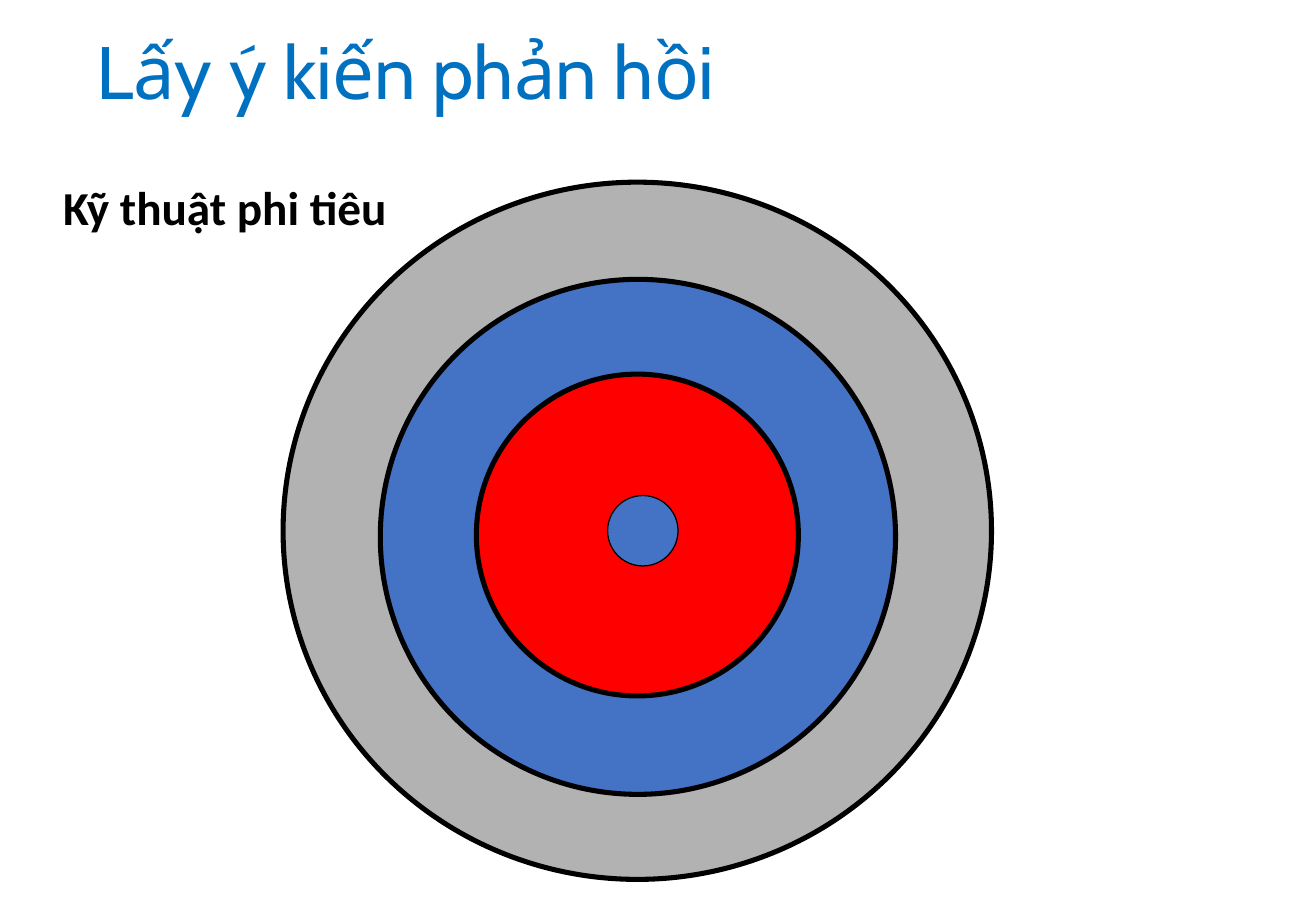
from pptx import Presentation
from pptx import util as u
from pptx.dml.color import RGBColor
from pptx.enum import shapes, text

PX = 9144  # EMU per px, 100 px to the inch
TITLE_ONLY = 5

# Rings from the outside in: left, top, width, height, fill, line width in points
RINGS = [
    (233, 150, 583, 574, "B2B2B2", 3),
    (313, 230, 424, 424, "4472C4", 3),
    (392, 308, 265, 265, "FF0000", 3),
    (500, 408, 58, 58, "4472C4", 0.75),
]


def px(*lengths):
    return [u.Emu(length * PX) for length in lengths]


def color(value):
    return RGBColor.from_string(value)


def write(shape, content, font_name, size, font_color, bold=False):
    frame = shape.text_frame
    frame.text = content
    frame.word_wrap = True
    paragraph = frame.paragraphs[0]
    paragraph.alignment = text.PP_ALIGN.LEFT
    font = paragraph.font
    font.name, font.size, font.bold = font_name, u.Pt(size), bold
    font.color.rgb = color(font_color)
    return paragraph


def set_title(slide, content):
    title = slide.shapes.title
    title.left, title.top, title.width, title.height = px(69, 15, 898, 94)
    paragraph = write(title, content, "Cabin", 44, "0070C0")
    paragraph.line_spacing = 0.9
    title.text_frame.vertical_anchor = text.MSO_ANCHOR.MIDDLE
    title.text_frame.auto_size = text.MSO_AUTO_SIZE.NONE


def add_ring(slide, left, top, width, height, fill, line_width):
    ring = slide.shapes.add_shape(shapes.MSO_SHAPE.OVAL, *px(left, top, width, height))
    ring.shadow.inherit = False
    ring.fill.solid()
    ring.fill.fore_color.rgb = color(fill)
    ring.line.color.rgb = color("000000")
    ring.line.width = u.Pt(line_width)


def add_label(slide, content):
    label = slide.shapes.add_textbox(*px(42, 142, 358, 57))
    write(label, content, "Calibri", 28, "000000", bold=True)
    label.text_frame.auto_size = text.MSO_AUTO_SIZE.SHAPE_TO_FIT_TEXT


def main():
    presentation = Presentation()
    presentation.slide_width, presentation.slide_height = px(1083, 750)
    slide = presentation.slides.add_slide(presentation.slide_layouts[TITLE_ONLY])

    # Heading
    set_title(slide, "Lấy ý kiến phản hồi")

    # Dartboard
    for ring in RINGS:
        add_ring(slide, *ring)

    # Name of the technique
    add_label(slide, "Kỹ thuật phi tiêu")

    presentation.save("out.pptx")


if __name__ == "__main__":
    main()
